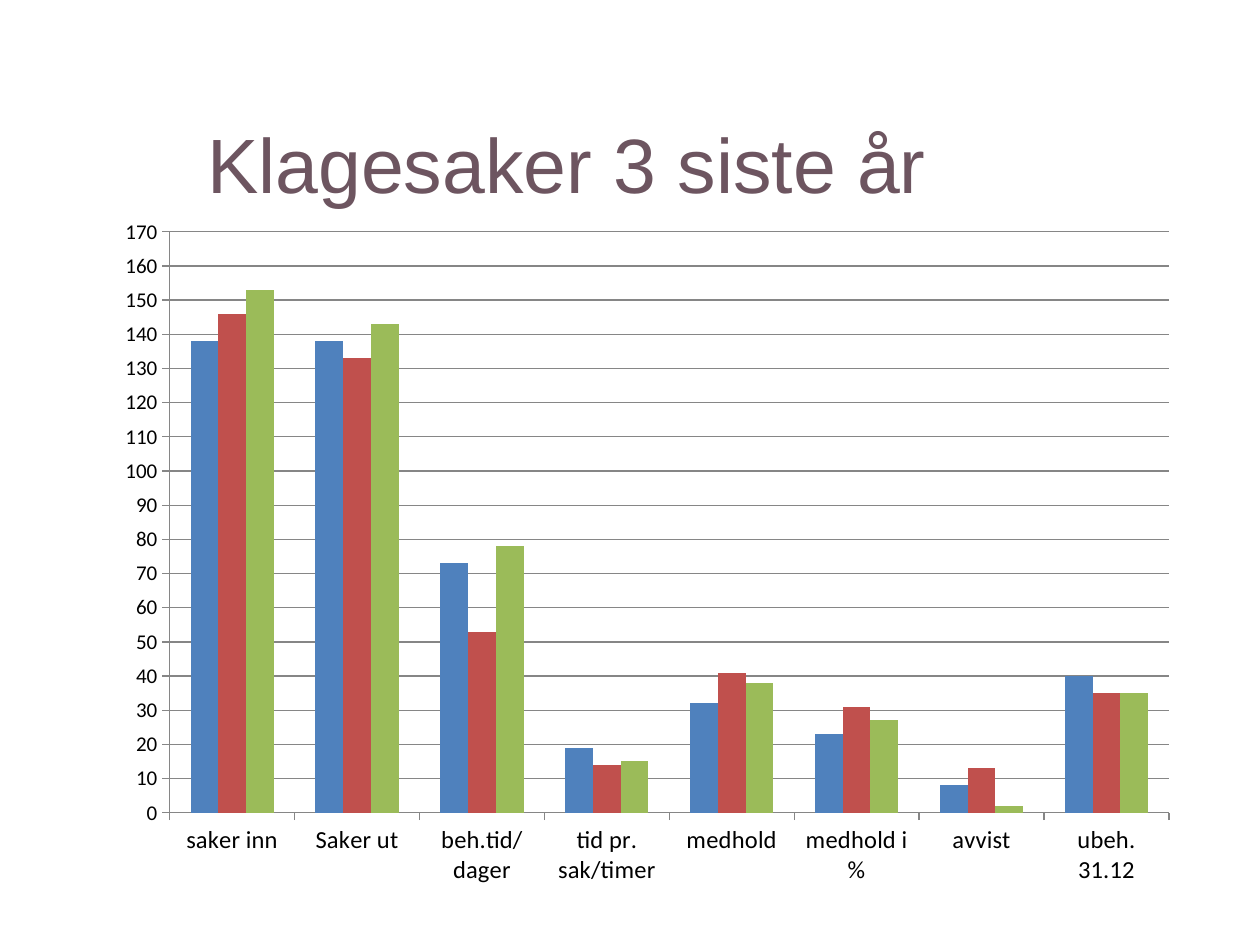
from lxml import etree
from pptx import Presentation
from pptx import util as u
from pptx.chart.data import CategoryChartData
from pptx.dml.color import RGBColor
from pptx.enum import chart as ch, text
from pptx.oxml.ns import qn

TITLE = "Klagesaker 3 siste år"
CATEGORIES = ["saker inn", "Saker ut", "beh.tid/dager", "tid pr. sak/timer",
              "medhold", "medhold i %", "avvist", "ubeh. 31.12"]
SERIES = [
    ("Series 1", "blue", (138, 138, 73, 19, 32, 23, 8, 40)),
    ("Series 2", "red", (146, 133, 53, 14, 41, 31, 13, 35)),
    ("Series 3", "green", (153, 143, 78, 15, 38, 27, 2, 35)),
]
COLORS = {"title": "6D5560", "text": "000000", "line": "868686",
          "blue": "4F81BD", "red": "C0504D", "green": "9BBB59"}
TITLE_BOX = (0, 0.85, 9, 0.88)
CHART_BOX = (0.83, 1.62, 8.62, 5.49)
PLOT_SHARES = {"x": 0.06, "y": 0.04, "w": 0.92, "h": 0.84}


def color(name):
    return RGBColor.from_string(COLORS[name])


def set_font(font, name, size, color_name):
    font.name, font.size = name, u.Pt(size)
    font.color.rgb = color(color_name)


def add_title(slide):
    title = slide.shapes.title
    title.left, title.top, title.width, title.height = map(u.Inches, TITLE_BOX)
    frame = title.text_frame
    frame.vertical_anchor = text.MSO_ANCHOR.MIDDLE
    paragraph = frame.paragraphs[0]
    paragraph.alignment = text.PP_ALIGN.CENTER
    run = paragraph.add_run()
    run.text = TITLE
    set_font(run.font, "Arial", 44, "title")


def fix_plot_area(chart):
    """Place the inner plot area at fixed shares of the chart."""
    plot_area = chart.element.find(".//" + qn("c:plotArea"))
    layout = plot_area.find(qn("c:layout"))
    if layout is None:
        layout = etree.Element(qn("c:layout"))
        plot_area.insert(0, layout)
    manual = etree.SubElement(layout, qn("c:manualLayout"))
    settings = {"layoutTarget": "inner", "xMode": "edge", "yMode": "edge", **PLOT_SHARES}
    for tag, value in settings.items():
        etree.SubElement(manual, qn("c:" + tag)).set("val", str(value))


def style_axis(axis, size):
    axis.major_tick_mark = ch.XL_TICK_MARK.OUTSIDE
    axis.minor_tick_mark = ch.XL_TICK_MARK.NONE
    axis.format.line.color.rgb = color("line")
    axis.format.line.width = u.Pt(0.75)
    set_font(axis.tick_labels.font, "Calibri", size, "text")


def add_chart(slide):
    data = CategoryChartData()
    data.categories = CATEGORIES
    for name, _, values in SERIES:
        data.add_series(name, values)
    chart = slide.shapes.add_chart(ch.XL_CHART_TYPE.COLUMN_CLUSTERED,
                                   *map(u.Inches, CHART_BOX), data).chart
    chart.has_legend = chart.has_title = False
    set_font(chart.font, "Calibri", 10, "text")
    fix_plot_area(chart)

    plot = chart.plots[0]
    plot.gap_width, plot.overlap, plot.vary_by_categories = 150, 0, False
    for series, (_, color_name, _) in zip(plot.series, SERIES):
        series.format.fill.solid()
        series.format.fill.fore_color.rgb = color(color_name)

    style_axis(chart.category_axis, 14)
    value_axis = chart.value_axis
    style_axis(value_axis, 12)
    value_axis.minimum_scale, value_axis.maximum_scale, value_axis.major_unit = 0, 170, 10
    value_axis.has_major_gridlines = True
    grid_line = value_axis.major_gridlines.format.line
    grid_line.color.rgb = color("line")
    grid_line.width = u.Pt(0.75)


def main():
    presentation = Presentation()
    presentation.slide_width, presentation.slide_height = u.Inches(10), u.Inches(7.5)
    slide = presentation.slides.add_slide(presentation.slide_layouts[5])
    add_title(slide)
    add_chart(slide)
    presentation.save("out.pptx")


if __name__ == "__main__":
    main()
